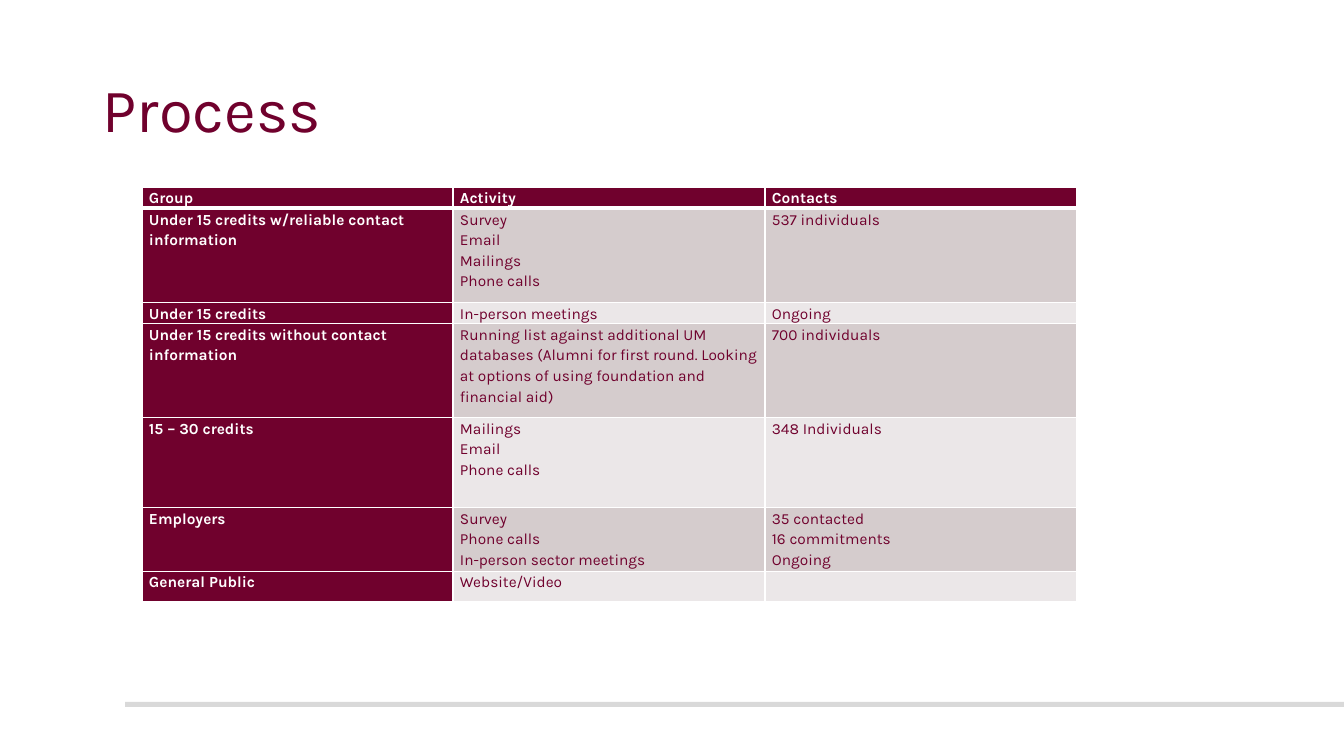
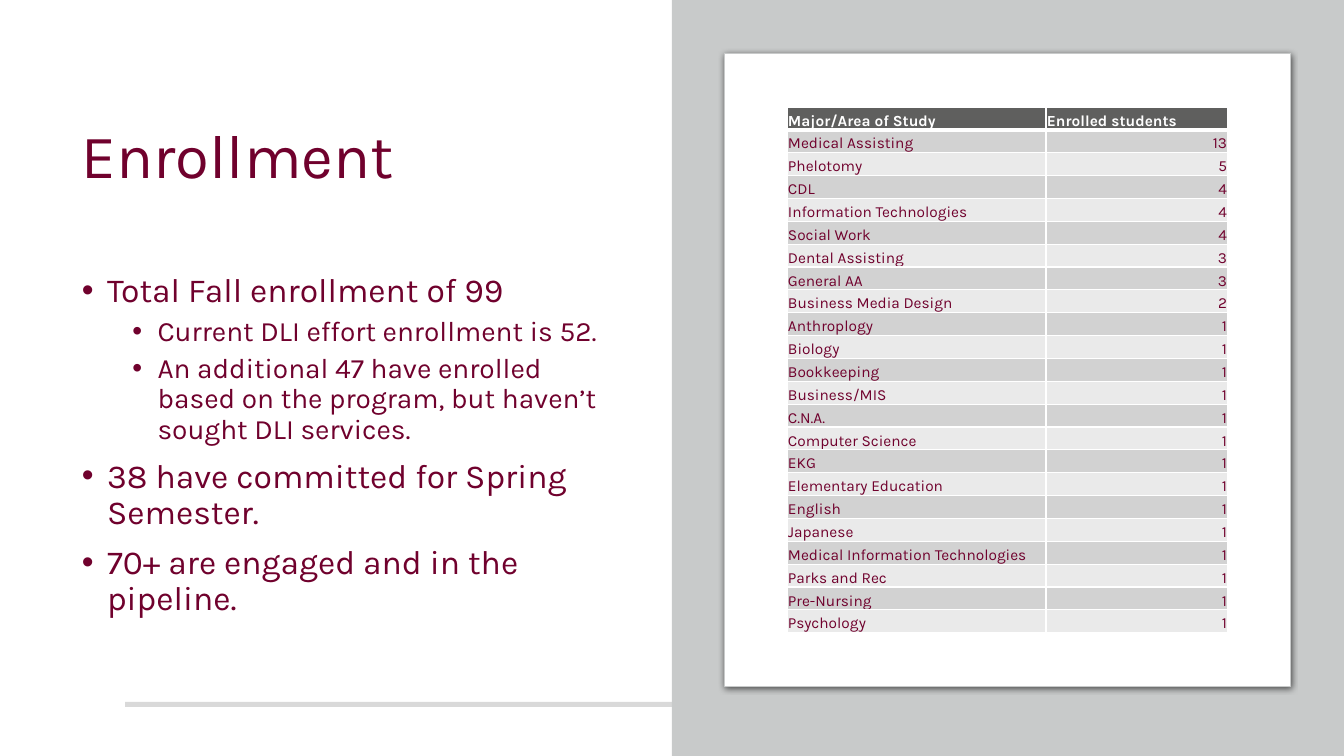
from lxml import etree
from pptx import Presentation, util as u
from pptx.dml.color import RGBColor
from pptx.enum import shapes, text
from pptx.oxml.ns import qn

SCALE = 12192000 / 1344
FONT = "Karla"
MAROON, WHITE, GREY = "70012D", "FFFFFF", "C8CACA"
RECT, ROUND = shapes.MSO_SHAPE.RECTANGLE, shapes.MSO_SHAPE.ROUNDED_RECTANGLE
TOP, MIDDLE, BOTTOM = text.MSO_ANCHOR.TOP, text.MSO_ANCHOR.MIDDLE, text.MSO_ANCHOR.BOTTOM
LEFT, RIGHT = text.PP_ALIGN.LEFT, text.PP_ALIGN.RIGHT
rgb = RGBColor.from_string


def px(n):
    return u.Emu(round(n * SCALE))


def add_run(p, words, size, color=MAROON, bold=False):
    r = p.add_run()
    r.text = words
    r.font.name, r.font.size, r.font.bold = FONT, u.Pt(size), bold
    r.font.color.rgb = rgb(color)


process_rows = [
    ("Group", "Activity", "Contacts"),
    ("Under 15 credits w/reliable contact information", "Survey\nEmail\nMailings\nPhone calls", "537 individuals"),
    ("Under 15 credits", "In-person meetings", "Ongoing"),
    ("Under 15 credits without contact information",
     "Running list against additional UM databases (Alumni for first round. "
     "Looking at options of using foundation and financial aid)", "700 individuals"),
    ("15 – 30 credits", "Mailings\nEmail\nPhone calls", "348 Individuals"),
    ("Employers", "Survey\nPhone calls\nIn-person sector meetings", "35 contacted\n16 commitments\nOngoing"),
    ("General Public", "Website/Video", ""),
]
enrollment_rows = [
    ("Major/Area of Study", "Enrolled students"),
    ("Medical Assisting", "13"), ("Phelotomy", "5"), ("CDL", "4"),
    ("Information Technologies", "4"), ("Social Work", "4"),
    ("Dental Assisting", "3"), ("General AA", "3"), ("Business Media Design", "2"),
]
single_majors = [
    "Anthroplogy", "Biology", "Bookkeeping", "Business/MIS", "C.N.A.", "Computer Science", "EKG",
    "Elementary Education", "English", "Japanese", "Medical Information Technologies",
    "Parks and Rec", "Pre-Nursing", "Psychology",
]
enrollment_rows += [(major, "1") for major in single_majors]

band = (RECT, (125, 702, 1219, 5), "D9D9D9", None)
pages = [
    dict(
        title="Process", title_at=(93, 40, 1159, 146), shapes=[band], bullets=[],
        rows=process_rows, at=(142, 187), cols=[311, 312, 312], heights=[21, 94, 20, 94, 90, 62, 21],
        head=MAROON, bands=("EBE7E8", "D5CCCD"), head_cols=1, anchor=TOP, insets=(7, 0),
        spacing=1.15, aligns=(LEFT, LEFT, LEFT),
    ),
    dict(
        title="Enrollment", title_at=(72, 70, 545, 178),
        shapes=[band, (RECT, (672, 0, 672, 756), GREY, None), (ROUND, (725, 53, 566, 633), WHITE, GREY)],
        bullets=[
            (0, "Total Fall enrollment of 99"),
            (1, "Current DLI effort enrollment is 52."),
            (1, "An additional 47 have enrolled based on the program, but haven’t sought DLI services."),
            (0, "38 have committed for Spring Semester."),
            (0, "70+ are engaged and in the pipeline."),
        ],
        rows=enrollment_rows, at=(787, 107), cols=[259, 182],
        heights=[526 / len(enrollment_rows)] * len(enrollment_rows),
        head="5F5F5E", bands=("EAEAEA", "D2D2D2"), head_cols=0, anchor=BOTTOM, insets=(1, 1),
        spacing=1, aligns=(LEFT, RIGHT),
    ),
]

prs = Presentation()
prs.slide_width, prs.slide_height = px(1344), px(756)

for page in pages:
    s = prs.slides.add_slide(prs.slide_layouts[6])
    s.background.fill.solid()
    s.background.fill.fore_color.rgb = rgb(WHITE)

    for kind, at, fill, line in page["shapes"]:
        sp = s.shapes.add_shape(kind, *map(px, at))
        sp.shadow.inherit = False
        sp.fill.solid()
        sp.fill.fore_color.rgb = rgb(fill)
        sp.line.fill.background()
        if kind == ROUND:
            sp.adjustments[0] = 0
            sp.line.color.rgb = rgb(line)
            sp.line.width = u.Pt(0.75)
            effects = sp._element.spPr.find(qn("a:effectLst"))
            shadow = etree.SubElement(effects, qn("a:outerShdw"), blurRad=str(u.Pt(4.5)),
                                      dist=str(u.Pt(1.5)), dir="5400000", rotWithShape="0")
            black = etree.SubElement(shadow, qn("a:srgbClr"), val="000000")
            etree.SubElement(black, qn("a:alpha"), val="63000")

    tf = s.shapes.add_textbox(*map(px, page["title_at"])).text_frame
    tf.word_wrap = True
    tf.vertical_anchor = MIDDLE
    p = tf.paragraphs[0]
    p.line_spacing = 0.9
    add_run(p, page["title"], 44)

    if page["bullets"]:
        tf = s.shapes.add_textbox(*map(px, (72, 269, 545, 417))).text_frame
        tf.word_wrap = True
        for i, (level, words) in enumerate(page["bullets"]):
            p = tf.add_paragraph() if i else tf.paragraphs[0]
            p.level = level
            pPr = p._p.get_or_add_pPr()
            pPr.set("marL", str(u.Inches(0.25 + 0.5 * level)))
            pPr.set("indent", str(u.Inches(-0.25)))
            etree.SubElement(pPr, qn("a:buFont"), typeface="Arial")
            etree.SubElement(pPr, qn("a:buChar"), char="•")
            p.line_spacing = 0.9
            if i:
                p.space_before = u.Pt(5 if level else 10)
            add_run(p, words, 20 if level else 24)

    rows, cols, heights = page["rows"], page["cols"], page["heights"]
    size = (sum(cols), sum(heights))
    tbl = s.shapes.add_table(len(rows), len(cols), *map(px, page["at"] + size)).table
    for column, width in zip(tbl.columns, cols):
        column.width = px(width)
    for i, row in enumerate(rows):
        tbl.rows[i].height = px(heights[i])
        for j, words in enumerate(row):
            cell = tbl.cell(i, j)
            is_head = i == 0 or j < page["head_cols"]
            side, top = page["insets"]
            cell.margin_left = cell.margin_right = px(side)
            cell.margin_top, cell.margin_bottom = px(top), 0
            cell.vertical_anchor = page["anchor"]
            tcPr = cell._tc.get_or_add_tcPr()
            for edge in "LRTB":
                thick = (i, edge) in ((0, "B"), (1, "T"))
                ln = etree.SubElement(tcPr, qn("a:ln" + edge), w=str(u.Pt(3 if thick else 1)))
                etree.SubElement(etree.SubElement(ln, qn("a:solidFill")), qn("a:srgbClr"), val=WHITE)
            cell.fill.solid()
            cell.fill.fore_color.rgb = rgb(page["head"] if is_head else page["bands"][i % 2])
            tf = cell.text_frame
            for k, line in enumerate(words.split("\n")):
                p = tf.add_paragraph() if k else tf.paragraphs[0]
                p.alignment = page["aligns"][j] if i else LEFT
                p.line_spacing = page["spacing"]
                add_run(p, line, 11, WHITE if is_head else MAROON, is_head)

prs.save("out.pptx")
